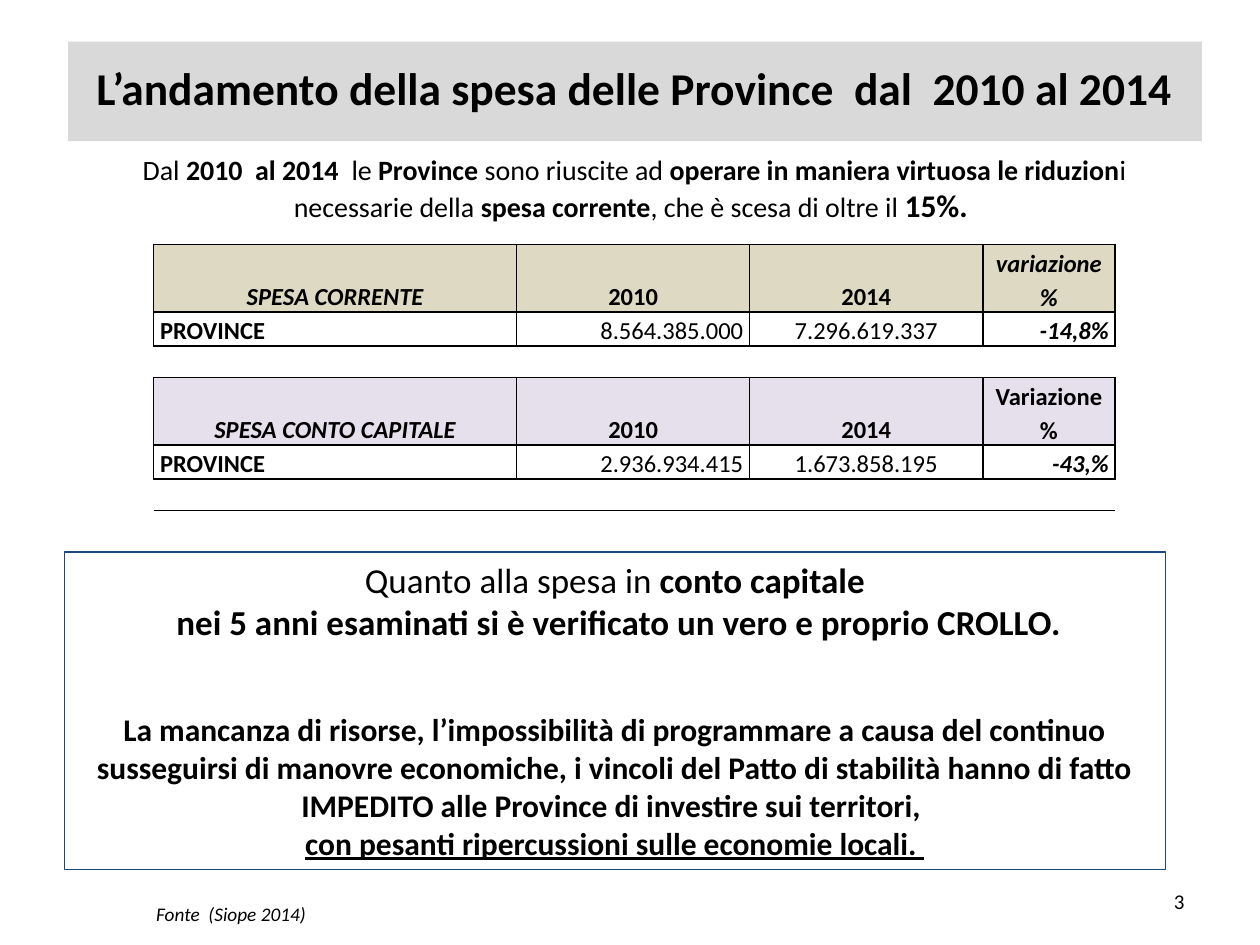
import pptx
import pptx.dml.color
import pptx.enum.shapes
import pptx.enum.text
import pptx.oxml
import pptx.oxml.ns
import pptx.util
from pptx.util import Inches, Pt

RGB = pptx.dml.color.RGBColor
ALIGN = pptx.enum.text.PP_ALIGN
ANCHOR = pptx.enum.text.MSO_ANCHOR
BLACK, WHITE = RGB(0, 0, 0), RGB(255, 255, 255)
GREY, NAVY = RGB(0xD9, 0xD9, 0xD9), RGB(0x1F, 0x49, 0x7D)
SAND, LILAC = RGB(0xDD, 0xD9, 0xC3), RGB(0xE6, 0xE0, 0xEC)
FONT = "Calibri"
BOLD = {"bold": True}
ITALIC = {"italic": True}
BOLD_ITALIC = {"bold": True, "italic": True}

# Content: a paragraph is a list of (text, format) spans
TITLE = [[("L’andamento della spesa delle Province  dal  2010 al 2014", BOLD)]]
INTRO = [[
    ("Dal ", {}), ("2010  al 2014  ", BOLD), ("le ", {}), ("Province", BOLD),
    (" sono riuscite ad ", {}), ("operare in maniera virtuosa le riduzion", BOLD),
    ("i necessarie della ", {}), ("spesa corrente", BOLD),
    (", che è scesa di oltre il ", {}), ("15%. ", {"bold": True, "size": Pt(18)}),
]]
CLOSING = [
    [("Quanto alla spesa in ", {}), ("conto capitale", BOLD)],
    [(" nei 5 anni esaminati si è verificato un vero e proprio CROLLO.", BOLD)],
    [("La mancanza di risorse, l’impossibilità di programmare a causa del continuo "
      "susseguirsi di manovre economiche, i vincoli del Patto di stabilità hanno di fatto "
      "IMPEDITO alle Province di investire sui territori, ", {"bold": True, "size": Pt(18)})],
    [("con pesanti ripercussioni sulle economie locali. ",
      {"bold": True, "size": Pt(18), "underline": True})],
]
SOURCE = [[("Fonte  (Siope 2014)", ITALIC)]]
NUMBER = [[("3", {})]]

# Each block: header colour, format of the last header, headers, values
BLOCKS = [
    (SAND, BOLD_ITALIC, ["SPESA CORRENTE", "2010", "2014", "variazione %"],
     ["PROVINCE", "8.564.385.000", "7.296.619.337", "-14,8%"]),
    (LILAC, BOLD, ["SPESA CONTO CAPITALE", "2010", "2014", "Variazione %"],
     ["PROVINCE", "2.936.934.415", "1.673.858.195", "-43,%"]),
]
COLUMNS = [2.88, 1.85, 1.85, 1.05]
ROWS = [0.53, 0.27, 0.25]  # header, values, gap
VALUE_STYLES = [
    (ALIGN.LEFT, ANCHOR.BOTTOM, BOLD), (ALIGN.RIGHT, ANCHOR.MIDDLE, {}),
    (ALIGN.CENTER, ANCHOR.MIDDLE, {}), (ALIGN.RIGHT, ANCHOR.BOTTOM, BOLD_ITALIC),
]


def write(frame, paragraphs, size, align):
    for index, spans in enumerate(paragraphs):
        para = frame.add_paragraph() if index else frame.paragraphs[0]
        para.alignment = align
        for text, style in spans:
            span = para.add_run()
            span.text = text
            span.font.color.rgb = BLACK
            for name, value in {"name": FONT, "size": Pt(size), **style}.items():
                setattr(span.font, name, value)


def add_text(page, place, paragraphs, size, align=ALIGN.CENTER, anchor=ANCHOR.TOP):
    box = page.shapes.add_textbox(*map(Inches, place))
    box.text_frame.word_wrap = True
    box.text_frame.vertical_anchor = anchor
    write(box.text_frame, paragraphs, size, align)
    return box


def set_borders(cell, visible):
    properties = cell._tc.get_or_add_tcPr()
    for side in "LRTB":
        paint = ('<a:solidFill><a:srgbClr val="000000"/></a:solidFill>'
                 if side in visible else "<a:noFill/>")
        properties.append(pptx.oxml.parse_xml(
            f'<a:ln{side} {pptx.oxml.ns.nsdecls("a")} w="12700">{paint}</a:ln{side}>'))


def fill_cell(cell, text, style, align, anchor, colour):
    set_borders(cell, "LRTB")
    cell.fill.solid()
    cell.fill.fore_color.rgb = colour
    cell.vertical_anchor = anchor
    write(cell.text_frame, [[(text, style)]], 14, align)
    cell.text_frame.paragraphs[0].line_spacing = 1.15


def clear_cell(cell):
    set_borders(cell, "TB")
    cell.fill.background()
    # Keeps the empty row from growing
    cell.text_frame.paragraphs[0]._p.append(pptx.oxml.parse_xml(
        f'<a:endParaRPr {pptx.oxml.ns.nsdecls("a")} sz="1400"/>'))


def add_spending_table(page):
    count = len(ROWS) * len(BLOCKS)
    table = page.shapes.add_table(
        count, len(COLUMNS), Inches(1.22), Inches(1.94),
        Inches(sum(COLUMNS)), Inches(sum(ROWS) * len(BLOCKS))).table
    table.first_row = table.horz_banding = False
    for column, width in zip(table.columns, COLUMNS):
        column.width = Inches(width)
    for index, row in enumerate(table.rows):
        row.height = Inches(ROWS[index % len(ROWS)])
        for cell in row.cells:
            cell.margin_left = cell.margin_right = Inches(0.05)
            cell.margin_top = cell.margin_bottom = 0
    for block, (colour, last_style, headers, values) in enumerate(BLOCKS):
        top = block * len(ROWS)
        header_styles = [BOLD_ITALIC, BOLD, BOLD, last_style]
        for column, (align, anchor, style) in enumerate(VALUE_STYLES):
            fill_cell(table.cell(top, column), headers[column], header_styles[column],
                      ALIGN.CENTER, ANCHOR.BOTTOM, colour)
            fill_cell(table.cell(top + 1, column), values[column], style,
                      align, anchor, WHITE)
            clear_cell(table.cell(top + 2, column))


def main():
    deck = pptx.Presentation()
    deck.slide_width, deck.slide_height = Inches(10), Inches(7.5)
    page = deck.slides.add_slide(deck.slide_layouts[6])

    # Title band
    band = page.shapes.add_shape(pptx.enum.shapes.MSO_SHAPE.RECTANGLE,
                                 *map(Inches, (0.54, 0.33, 9, 0.79)))
    band.shadow.inherit = False
    band.fill.solid()
    band.fill.fore_color.rgb = GREY
    band.line.fill.background()
    band.text_frame.word_wrap = True
    band.text_frame.vertical_anchor = ANCHOR.MIDDLE
    band.text_frame.margin_bottom = Inches(0.12)
    write(band.text_frame, TITLE, 26, ALIGN.CENTER)

    # Page number, introduction, table and source
    add_text(page, (7.17, 6.95, 2.33, 0.4), NUMBER, 12, ALIGN.RIGHT, ANCHOR.MIDDLE)
    add_text(page, (0.98, 1.16, 8.11, 0.67), INTRO, 16)
    add_spending_table(page)
    add_text(page, (1.14, 7.11, 1.81, 0.29), SOURCE, 11, ALIGN.LEFT)

    # Framed conclusion
    frame = add_text(page, (0.51, 4.38, 8.74, 2.52), CLOSING, 20)
    frame.line.color.rgb = NAVY
    frame.line.width = Pt(0.75)
    frame.text_frame.paragraphs[2].space_before = Pt(39)

    deck.save("out.pptx")


if __name__ == "__main__":
    main()
